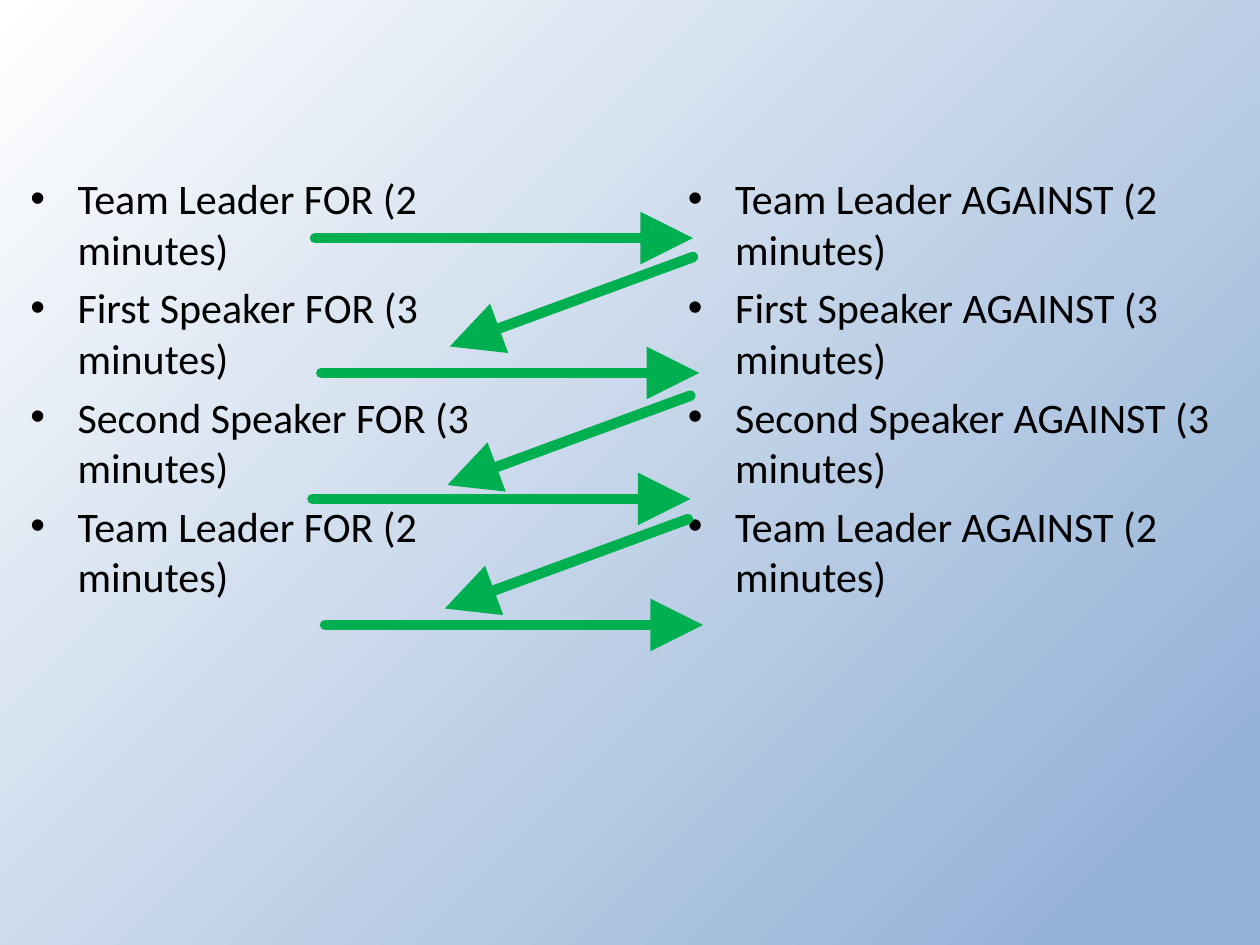
from dataclasses import dataclass

from lxml import etree
from pptx import Presentation
from pptx import util as u
from pptx.dml.color import RGBColor
from pptx.enum import shapes
from pptx.oxml.ns import qn

# Content
ROUNDS = [("Team Leader", 2), ("First Speaker", 3),
          ("Second Speaker", 3), ("Team Leader", 2)]
SIDES = [("FOR", 0.14, 4.36), ("AGAINST", 5.36, 4.42)]  # side, left, width

# Speaking order: start points of the arrows across and the arrows back
ACROSS_STARTS = [(2.5, 1.89), (2.55, 2.96), (2.48, 3.96), (2.58, 4.96)]
BACK_STARTS = [(5.5, 2.04), (5.48, 3.14), (5.46, 4.12)]
ACROSS, BACK = (3, 0), (-1.93, 0.71)
LIST_TOP, LIST_HEIGHT = 1.32, 4.32


@dataclass(frozen=True)
class Theme:
    font: str = "Calibri"
    size: int = 24
    ink: str = "000000"
    arrow: str = "00B050"
    arrow_width: int = 6
    stops: tuple = ((0.09, "95B3D7"), (1, "FFFFFF"))


THEME = Theme()


def paint_background(s):
    fill = s.background.fill
    fill.gradient()
    for stop, (position, colour) in zip(fill.gradient_stops, THEME.stops):
        stop.position = position
        stop.color.rgb = RGBColor.from_string(colour)
    # Radiate from the bottom right corner
    grad = s.element.find(".//" + qn("a:gradFill"))
    lin = grad.find(qn("a:lin"))
    radial = etree.Element(qn("a:path"), {"path": "circle"})
    etree.SubElement(radial, qn("a:fillToRect"), l="100000", t="100000")
    grad.replace(lin, radial)


def fill_list(sp, side, left, width):
    sp.left, sp.top = u.Inches(left), u.Inches(LIST_TOP)
    sp.width, sp.height = u.Inches(width), u.Inches(LIST_HEIGHT)
    tf = sp.text_frame
    for i, (speaker, minutes) in enumerate(ROUNDS):
        p = tf.paragraphs[0] if i == 0 else tf.add_paragraph()
        r = p.add_run()
        r.text = f"{speaker} {side} ({minutes} minutes)"
        r.font.name, r.font.size = THEME.font, u.Pt(THEME.size)
        r.font.color.rgb = RGBColor.from_string(THEME.ink)


def add_arrow(s, start, step):
    (x, y), (dx, dy) = start, step
    sp = s.shapes.add_connector(
        shapes.MSO_CONNECTOR.STRAIGHT,
        *(u.Inches(v) for v in (x, y, x + dx, y + dy)))
    sp.line.width = u.Pt(THEME.arrow_width)
    sp.line.color.rgb = RGBColor.from_string(THEME.arrow)
    ln = sp.line._get_or_add_ln()
    ln.set("cap", "rnd")
    etree.SubElement(ln, qn("a:round"))
    etree.SubElement(ln, qn("a:tailEnd"), type="triangle", w="lg", len="lg")
    etree.SubElement(sp.element.spPr, qn("a:effectLst"))


def main():
    prs = Presentation()
    prs.slide_width, prs.slide_height = u.Inches(10), u.Inches(7.5)
    s = prs.slides.add_slide(prs.slide_layouts.get_by_name("Two Content"))
    paint_background(s)

    # Two teams' speaker lists
    title, *lists = s.placeholders
    title.element.getparent().remove(title.element)
    for sp, side in zip(lists, SIDES):
        fill_list(sp, *side)

    # Zigzag of turns
    for starts, step in ((ACROSS_STARTS, ACROSS), (BACK_STARTS, BACK)):
        for start in starts:
            add_arrow(s, start, step)

    prs.save("out.pptx")


if __name__ == "__main__":
    main()
